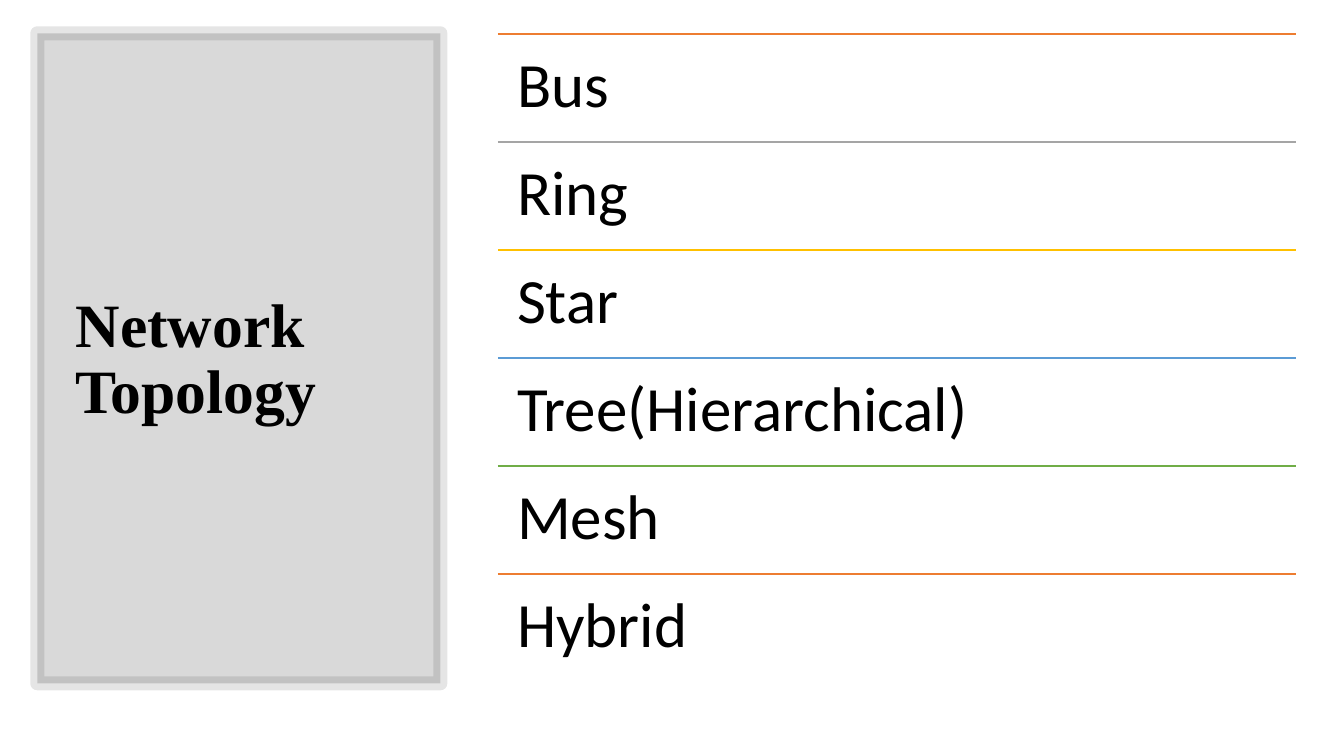
from lxml.etree import SubElement
from pptx import Presentation
from pptx.dml.color import RGBColor
from pptx.enum.shapes import MSO_CONNECTOR, MSO_SHAPE
from pptx.enum.text import MSO_ANCHOR, MSO_AUTO_SIZE, PP_ALIGN
from pptx.oxml.ns import qn
from pptx.util import Cm, Pt

COLORS = {
    "black": "000000",
    "orange": "ED7D31",
    "gray": "A5A5A5",
    "gold": "FFC000",
    "blue": "5B9BD5",
    "green": "70AD47",
}
TOPOLOGIES = [
    ("Bus", "orange"),
    ("Ring", "gray"),
    ("Star", "gold"),
    ("Tree(Hierarchical)", "blue"),
    ("Mesh", "green"),
    ("Hybrid", "orange"),
]
LIST_LEFT, LIST_TOP, LIST_WIDTH, ROW_HEIGHT = 12.55, 0.86, 20.12, 2.72


class SlideBuilder:
    title_font = "Times New Roman"
    list_font = "Calibri"

    def __init__(self, prs):
        self.s = prs.slides.add_slide(prs.slide_layouts[5])

    def color(self, name):
        return RGBColor.from_string(COLORS[name])

    def set_text(self, tf, text, font, size, bold, space_after):
        tf.text = text
        tf.word_wrap = True
        tf.auto_size = MSO_AUTO_SIZE.NONE
        p = tf.paragraphs[0]
        p.alignment = PP_ALIGN.LEFT
        p.line_spacing = 0.9
        p.space_after = Pt(space_after)
        r = p.runs[0]
        r.font.name = font
        r.font.size = Pt(size)
        r.font.bold = bold
        r.font.color.rgb = self.color("black")

    def title(self, text, left, top, width, height):
        sp = self.s.shapes.title
        sp.left, sp.top, sp.width, sp.height = Cm(left), Cm(top), Cm(width), Cm(height)
        tf = sp.text_frame
        tf.vertical_anchor = MSO_ANCHOR.MIDDLE
        self.set_text(tf, text, self.title_font, 44, True, 10)

    def panel(self, left, top, width, height):
        sp = self.s.shapes.add_shape(
            MSO_SHAPE.RECTANGLE, Cm(left), Cm(top), Cm(width), Cm(height)
        )
        sp.shadow.inherit = False
        sp.line.width = Pt(10)
        for fill in (sp.fill, sp.line.fill):
            fill.solid()
            fill.fore_color.rgb = self.color("black")
        colors = sp.element.spPr.iter(qn("a:srgbClr"))
        for clr, opacity in zip(colors, (15, 10)):
            SubElement(clr, qn("a:alpha"), val=str(opacity * 1000))
        self.s.shapes.title.element.addprevious(sp.element)

    def rule(self, left, top, width, color):
        line = self.s.shapes.add_connector(
            MSO_CONNECTOR.STRAIGHT, Cm(left), Cm(top), Cm(left + width), Cm(top)
        )
        line.line.color.rgb = self.color(color)
        line.line.width = Pt(1)
        SubElement(line.element.spPr, qn("a:effectLst"))

    def label(self, text, left, top, width, height):
        sp = self.s.shapes.add_textbox(Cm(left), Cm(top), Cm(width), Cm(height))
        tf = sp.text_frame
        tf.margin_left = tf.margin_right = tf.margin_top = tf.margin_bottom = Cm(0.48)
        tf.vertical_anchor = MSO_ANCHOR.TOP
        self.set_text(tf, text, self.list_font, 45, False, 16)


def main():
    prs = Presentation()
    prs.slide_width, prs.slide_height = Cm(33.87), Cm(19.05)
    slide = SlideBuilder(prs)
    slide.title("Network Topology", 1.65, 1.78, 8.79, 14.6)
    slide.panel(0.94, 0.84, 10.16, 16.38)
    for i, (name, color) in enumerate(TOPOLOGIES):
        top = LIST_TOP + i * ROW_HEIGHT
        slide.rule(LIST_LEFT, top, LIST_WIDTH, color)
        slide.label(name, LIST_LEFT, top, LIST_WIDTH, ROW_HEIGHT)
    prs.save("out.pptx")


if __name__ == "__main__":
    main()
